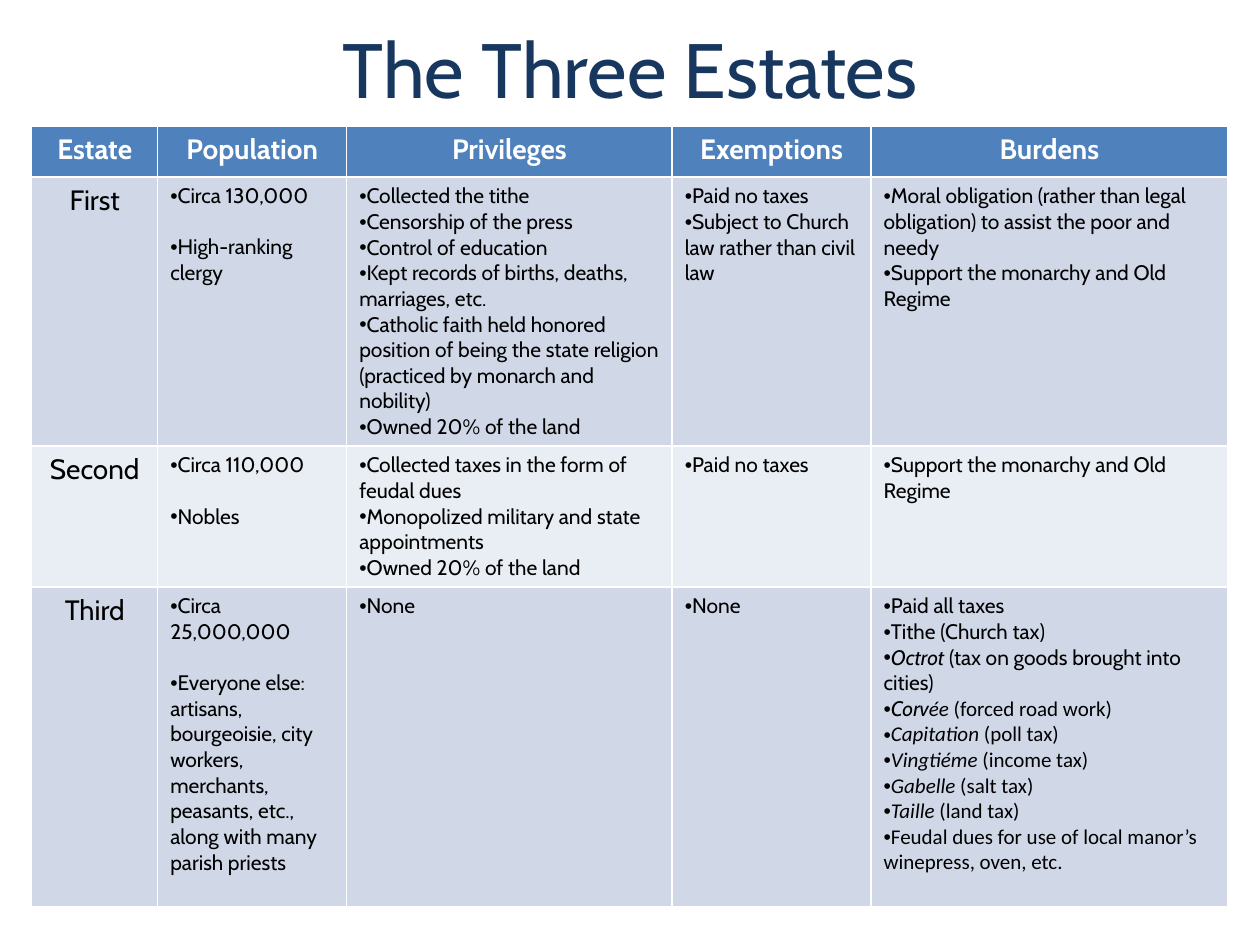
from lxml.etree import SubElement
from pptx import Presentation
from pptx.dml.color import RGBColor
from pptx.enum.text import MSO_ANCHOR as Anchor, PP_ALIGN as Align
from pptx.oxml.ns import qn
from pptx.util import Cm, Pt

NAVY = RGBColor(0x17, 0x37, 0x5E)
BLUE = RGBColor(0x4F, 0x81, 0xBD)
DARK_BAND = RGBColor(0xD0, 0xD8, 0xE8)
LIGHT_BAND = RGBColor(0xE9, 0xED, 0xF4)
WHITE = RGBColor(0xFF, 0xFF, 0xFF)
BLACK = RGBColor(0, 0, 0)

MAIN_FONT, SECOND_FONT = "Cabin", "Calibri"
TITLE_FORMAT = {"name": MAIN_FONT, "size": Pt(44)}
HEADER_FORMAT = {"name": MAIN_FONT, "size": Pt(16), "bold": True}
ESTATE_FORMAT = {"name": MAIN_FONT, "size": Pt(16), "bold": False}
BODY_FORMAT = {"name": MAIN_FONT, "size": Pt(12), "bold": False}
LINE_GAP = Pt(14.6)
POPULATION_COLUMN = 1

COLUMN_WIDTHS = [2.54, 3.81, 6.56, 4.01, 7.19]
ROW_HEIGHTS = [1.03, 5.42, 2.84, 6.45]
HEADERS = ["Estate", "Population", "Privileges", "Exemptions", "Burdens"]


def tax(name, meaning, font=SECOND_FONT):
    """Runs of a bullet: the French name in italics, then its meaning."""
    return [(name, True, font), (f" ({meaning})", False, font)]


# Each bullet is a string or a list of (text, italic, font) runs
ESTATES = [
    ("First",
     ["Circa 130,000", "High-ranking clergy"],
     ["Collected the tithe",
      "Censorship of the press",
      "Control of education",
      "Kept records of births, deaths, marriages, etc.",
      "Catholic faith held honored position of being the state religion "
      "(practiced by monarch and nobility)",
      "Owned 20% of the land"],
     ["Paid no taxes", "Subject to Church law rather than civil law"],
     ["Moral obligation (rather than legal obligation) to assist the poor "
      "and needy",
      "Support the monarchy and Old Regime"]),
    ("Second",
     ["Circa 110,000", "Nobles"],
     ["Collected taxes in the form of feudal dues",
      "Monopolized military and state appointments",
      "Owned 20% of the land"],
     ["Paid no taxes"],
     ["Support the monarchy and Old Regime"]),
    ("Third",
     ["Circa 25,000,000",
      "Everyone else: artisans, bourgeoisie, city workers, merchants, "
      "peasants, etc., along with many parish priests"],
     ["None"],
     ["None"],
     ["Paid all taxes",
      "Tithe (Church tax)",
      tax("Octrot", "tax on goods brought into cities", MAIN_FONT),
      [("Corv", True, MAIN_FONT), *tax("ée", "forced road work")],
      tax("Capitation", "poll tax"),
      tax("Vingtiéme", "income tax"),
      tax("Gabelle", "salt tax"),
      tax("Taille", "land tax"),
      [("Feudal dues for use of local manor’s winepress, oven, etc.",
        False, SECOND_FONT)]]),
]


def format_font(font, values, color):
    for name, value in values.items():
        setattr(font, name, value)
    font.color.rgb = color


def fill_cell(cell, color):
    cell.fill.solid()
    cell.fill.fore_color.rgb = color


def write_label(cell, text, values, color):
    paragraph = cell.text_frame.paragraphs[0]
    paragraph.alignment = Align.CENTER
    run = paragraph.add_run()
    run.text = text
    format_font(run.font, values, color)


def write_bullets(cell, bullets, gap):
    frame = cell.text_frame
    for index, bullet in enumerate(bullets):
        paragraph = frame.add_paragraph() if index else frame.paragraphs[0]
        if index and gap:
            paragraph.space_before = gap
        properties = paragraph._p.get_or_add_pPr()
        SubElement(properties, qn("a:buFont")).set("typeface", "Arial")
        SubElement(properties, qn("a:buChar")).set("char", "•")
        runs = [(bullet, False, MAIN_FONT)] if isinstance(bullet, str) else bullet
        for text, italic, font_name in runs:
            run = paragraph.add_run()
            run.text = text
            format_font(run.font,
                        {**BODY_FORMAT, "italic": italic, "name": font_name},
                        BLACK)


def add_title(slide, text):
    title = slide.shapes.title
    title.left, title.top = Cm(1.27), Cm(0)
    title.width, title.height = Cm(22.86), Cm(2.74)
    title.text_frame.text = text
    title.text_frame.vertical_anchor = Anchor.MIDDLE
    paragraph = title.text_frame.paragraphs[0]
    paragraph.alignment = Align.CENTER
    format_font(paragraph.runs[0].font, TITLE_FORMAT, NAVY)


def add_estates_table(slide):
    table = slide.shapes.add_table(
        len(ROW_HEIGHTS), len(COLUMN_WIDTHS), Cm(0.64), Cm(2.54),
        Cm(sum(COLUMN_WIDTHS)), Cm(sum(ROW_HEIGHTS))).table
    for column, width in zip(table.columns, COLUMN_WIDTHS):
        column.width = Cm(width)
    for row, height in zip(table.rows, ROW_HEIGHTS):
        row.height = Cm(height)

    # Header row
    for column, header in enumerate(HEADERS):
        cell = table.cell(0, column)
        fill_cell(cell, BLUE)
        write_label(cell, header, HEADER_FORMAT, WHITE)

    # One banded row per estate
    for row, (estate, *topics) in enumerate(ESTATES, start=1):
        for column in range(len(HEADERS)):
            fill_cell(table.cell(row, column), DARK_BAND if row % 2 else LIGHT_BAND)
        write_label(table.cell(row, 0), estate, ESTATE_FORMAT, BLACK)
        for column, bullets in enumerate(topics, start=1):
            gap = LINE_GAP if column == POPULATION_COLUMN else None
            write_bullets(table.cell(row, column), bullets, gap)


def main():
    presentation = Presentation()
    presentation.slide_width, presentation.slide_height = Cm(25.4), Cm(19.05)
    slide = presentation.slides.add_slide(presentation.slide_layouts[5])
    add_title(slide, "The Three Estates")
    add_estates_table(slide)
    presentation.save("out.pptx")


if __name__ == "__main__":
    main()
